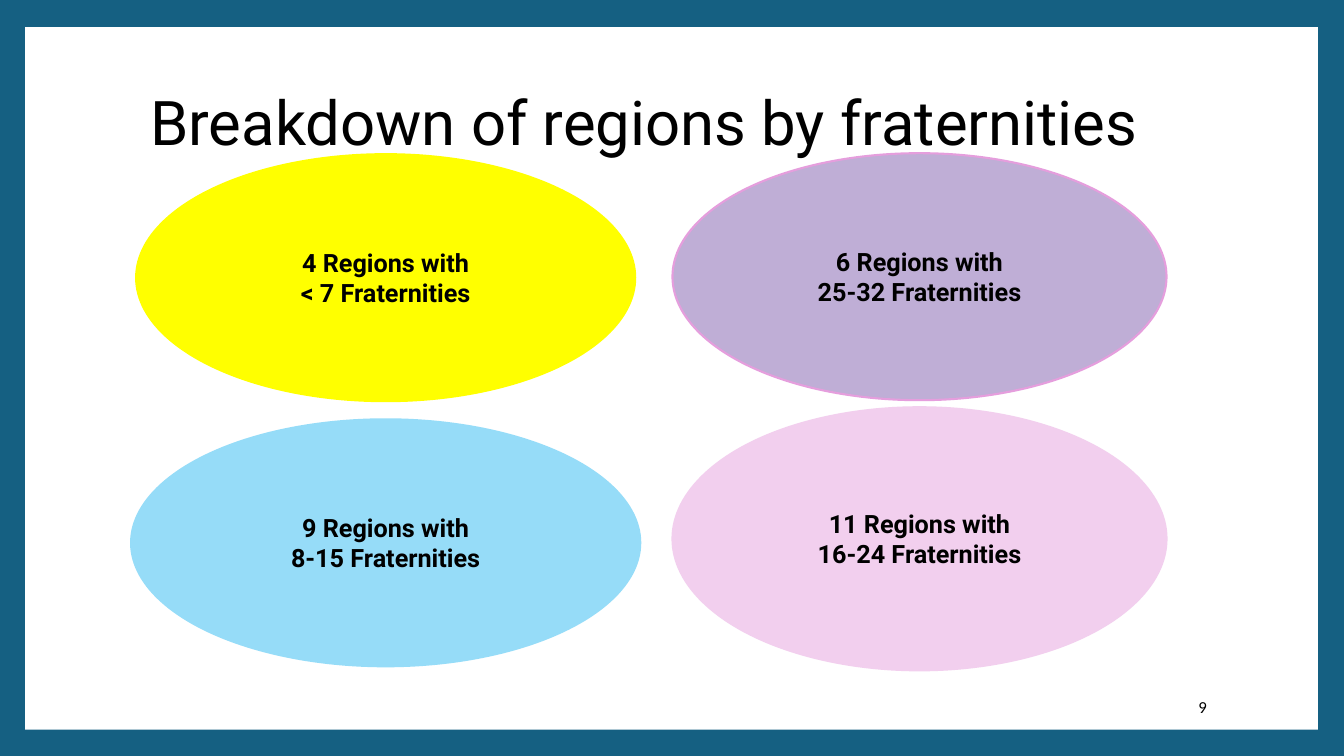
import pptx
import pptx.dml.color
import pptx.enum.shapes
import pptx.enum.text
import pptx.util

Inches = pptx.util.Inches
Shapes = pptx.enum.shapes.MSO_SHAPE
Align = pptx.enum.text.PP_ALIGN


def color(value):
    return pptx.dml.color.RGBColor.from_string(value)


class SlideBuilder:
    text_color = "000000"
    title_font = "Roboto"
    number_font = "Calibri"

    def __init__(self, presentation, background):
        self.slide = presentation.slides.add_slide(presentation.slide_layouts[5])
        fill = self.slide.background.fill
        fill.solid()
        fill.fore_color.rgb = color(background)

    def set_text(self, shape, lines, size, font, align, bold=False, spacing=1.0):
        frame = shape.text_frame
        frame.text = "\n".join(lines)
        frame_format = {
            "word_wrap": True,
            "auto_size": pptx.enum.text.MSO_AUTO_SIZE.NONE,
            "vertical_anchor": pptx.enum.text.MSO_ANCHOR.MIDDLE,
        }
        for name, value in frame_format.items():
            setattr(frame, name, value)
        font_format = {"name": font, "size": pptx.util.Pt(size), "bold": bold}
        for paragraph in frame.paragraphs:
            paragraph.alignment = align
            paragraph.line_spacing = spacing
            for run in paragraph.runs:
                for name, value in font_format.items():
                    setattr(run.font, name, value)
                run.font.color.rgb = color(self.text_color)

    def shape(self, kind, box, fill, line=None):
        shape = self.slide.shapes.add_shape(kind, *map(Inches, box))
        shape.shadow.inherit = False
        shape.fill.solid()
        shape.fill.fore_color.rgb = color(fill)
        if line:
            shape.line.color.rgb = color(line)
            shape.line.width = pptx.util.Pt(1.5)
        else:
            shape.line.fill.background()
        return shape

    def ellipse(self, box, fill, line, lines):
        shape = self.shape(Shapes.OVAL, box, fill, line)
        self.set_text(shape, lines, 18, self.title_font, Align.CENTER, bold=True)

    def number(self, box, text):
        shape = self.slide.shapes.add_textbox(*map(Inches, box))
        self.set_text(shape, [text], 12, self.number_font, Align.RIGHT)

    def title(self, box, text):
        shape = self.slide.shapes.title
        for name, value in zip(("left", "top", "width", "height"), box):
            setattr(shape, name, Inches(value))
        self.set_text(shape, [text], 44, self.title_font, Align.LEFT, spacing=0.9)
        shape.element.getparent().append(shape.element)


REGION_GROUPS = [
    ((1.35, 1.53, 4.95, 2.45), "FFFF00", "FFFF00", ["4 Regions with", "< 7 Fraternities"]),
    ((1.3, 4.16, 5.05, 2.45), "96DCF8", "96DCF8", ["9 Regions with", "8-15 Fraternities"]),
    ((6.67, 4.04, 4.9, 2.61), "F2CFEE", "F2CFEE", ["11 Regions with", "16-24 Fraternities"]),
    ((6.67, 1.52, 4.9, 2.45), "BFAED6", "E59EDD", ["6 Regions with", "25-32 Fraternities"]),
]


def main():
    presentation = pptx.Presentation()
    presentation.slide_width = Inches(13.33)
    presentation.slide_height = Inches(7.5)
    builder = SlideBuilder(presentation, "156082")
    builder.shape(Shapes.RECTANGLE, (0.25, 0.27, 12.82, 6.97), "FFFFFF")
    builder.number((10.2, 6.81, 1.87, 0.4), "9")
    for group in REGION_GROUPS:
        builder.ellipse(*group)
    builder.title((1.39, 0.51, 10.8, 1.48), "Breakdown of regions by fraternities")
    presentation.save("out.pptx")


if __name__ == "__main__":
    main()
